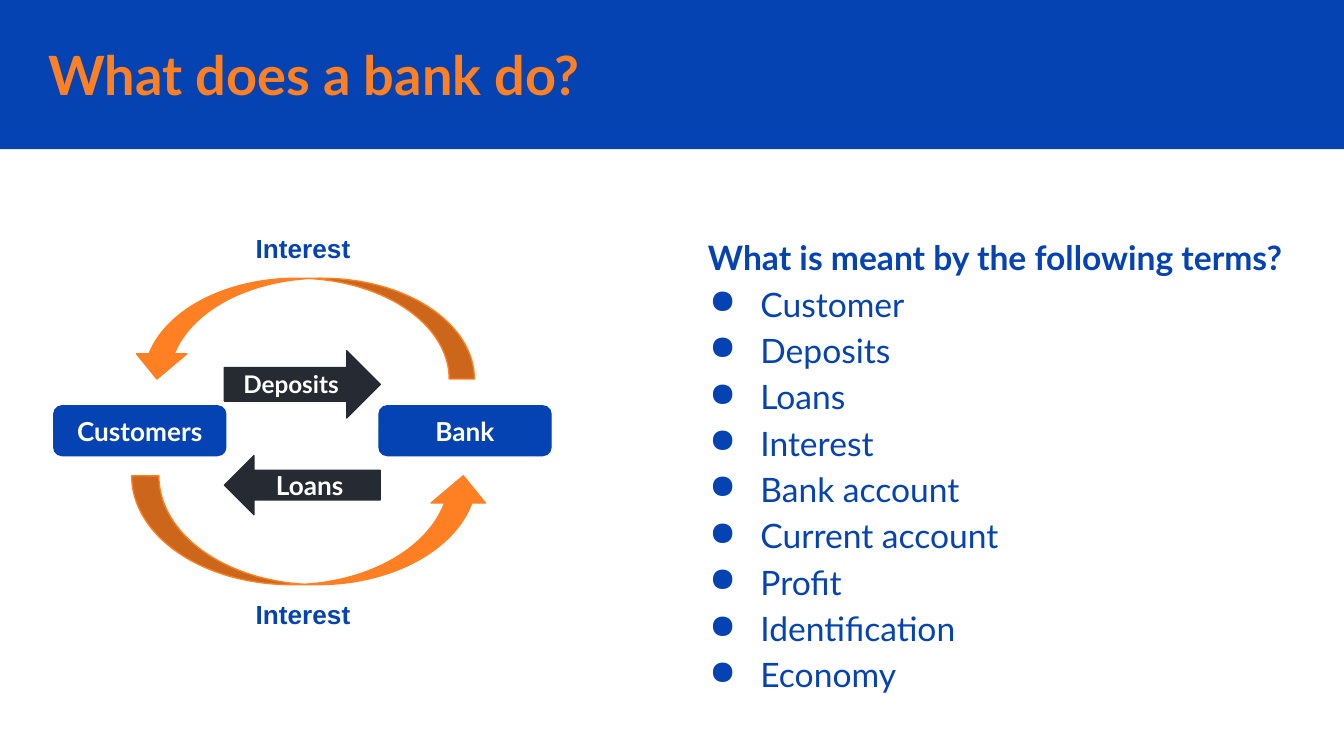
import pptx
import pptx.util
import pptx.dml.color
import pptx.enum.shapes
import pptx.enum.text
import pptx.oxml
import pptx.oxml.ns

Inches = pptx.util.Inches
Pt = pptx.util.Pt
SHAPE = pptx.enum.shapes.MSO_SHAPE
ALIGN = pptx.enum.text.PP_ALIGN
ANCHOR = pptx.enum.text.MSO_ANCHOR

COLORS = {"blue": "0543B3", "orange": "FF8022", "dark": "262A33", "white": "FFFFFF"}
TERMS = ["Customer", "Deposits", "Loans", "Interest", "Bank account",
         "Current account", "Profit", "Identification", "Economy"]


def tint(name):
    return pptx.dml.color.RGBColor.from_string(COLORS[name])


def style(para, size, color, bold=True, face="Lato"):
    for run in para.runs:
        run.font.name = face
        run.font.size = Pt(size)
        run.font.bold = bold
        run.font.color.rgb = tint(color)


def set_frame(frame, anchor):
    frame.word_wrap = True
    frame.vertical_anchor = anchor
    frame.margin_left = frame.margin_right = Inches(0.1)
    frame.margin_top = frame.margin_bottom = Inches(0.1)


def add_text(slide, box, anchor=ANCHOR.TOP):
    frame = slide.shapes.add_textbox(*map(Inches, box)).text_frame
    set_frame(frame, anchor)
    return frame


def add_block(slide, kind, box, color, text="", size=14):
    """Add a filled shape, with a centred white label if text is given."""
    shape = slide.shapes.add_shape(kind, *map(Inches, box))
    shape.shadow.inherit = False
    shape.fill.solid()
    shape.fill.fore_color.rgb = tint(color)
    shape.line.color.rgb = tint(color)
    shape.line.width = Pt(0.75)
    if text:
        frame = shape.text_frame
        set_frame(frame, ANCHOR.MIDDLE)
        frame.text = text
        frame.paragraphs[0].alignment = ALIGN.CENTER
        style(frame.paragraphs[0], size, "white")
    return shape


def add_curve(slide, box, turn):
    shape = add_block(slide, SHAPE.CURVED_DOWN_ARROW, box, "orange")
    shape.rotation = turn
    shape._element.spPr.xfrm.set("flipH", "1")


def add_bullet(para):
    props = para._p.get_or_add_pPr()
    props.set("marL", str(Inches(0.5)))
    props.set("indent", str(Inches(-0.38)))
    space = pptx.oxml.ns.nsdecls("a")
    for xml in (
        f'<a:buClr {space}><a:srgbClr val="{COLORS["blue"]}"/></a:buClr>',
        f'<a:buChar {space} char="●"/>',
    ):
        props.append(pptx.oxml.parse_xml(xml))


def add_header(slide, left, top, width, height):
    add_block(slide, SHAPE.RECTANGLE, (left, top, width, height), "blue").line.fill.background()
    frame = add_text(slide, (left + 0.26, top + 0.27, 8.46, 0.56), ANCHOR.MIDDLE)
    frame.text = "What does a bank do?"
    style(frame.paragraphs[0], 29, "orange")


def add_cycle(slide, left, top):
    """Draw the flow of money between customers and the bank."""
    for x, text in ((0, "Customers"), (2.42, "Bank")):
        add_block(slide, SHAPE.ROUNDED_RECTANGLE,
                  (left + x, top + 1.39, 1.28, 0.37), "blue", text)

    add_curve(slide, (left + 0.58, top + 0.44, 2.55, 0.75), 0)
    add_curve(slide, (left + 0.58, top + 1.91, 2.67, 0.81), 180)

    for kind, y, height, text, size in (
        (SHAPE.RIGHT_ARROW, 0.98, 0.5, "Deposits ", 13),
        (SHAPE.LEFT_ARROW, 1.76, 0.44, "Loans", 14),
    ):
        add_block(slide, kind, (left + 1.27, top + y, 1.16, height), "dark", text, size)

    for y in (0, 2.72):
        frame = add_text(slide, (left + 0.58, top + y, 2.55, 0.44))
        frame.text = "Interest"
        frame.paragraphs[0].alignment = ALIGN.CENTER
        style(frame.paragraphs[0], 14, "blue", face="Arial")


def add_terms(slide, left, top, width, height):
    frame = add_text(slide, (left, top, width, height))
    frame.text = "\n".join(["What is meant by the following terms?"] + TERMS)
    head, *rows = frame.paragraphs
    head._p.get_or_add_pPr().set("marL", str(Inches(0.11)))
    head.line_spacing = 1.15
    style(head, 18, "blue")
    for row in rows:
        add_bullet(row)
        row.line_spacing = 1.15
        style(row, 18, "blue", bold=False)


def main():
    deck = pptx.Presentation()
    deck.slide_width = Inches(10)
    deck.slide_height = deck.slide_width * 9 // 16
    slide = deck.slides.add_slide(deck.slide_layouts[6])
    add_header(slide, 0, 0, 10, 1.11)
    add_terms(slide, 5.06, 1.62, 4.8, 3.64)
    add_cycle(slide, 0.4, 1.63)
    deck.save("out.pptx")


if __name__ == "__main__":
    main()
